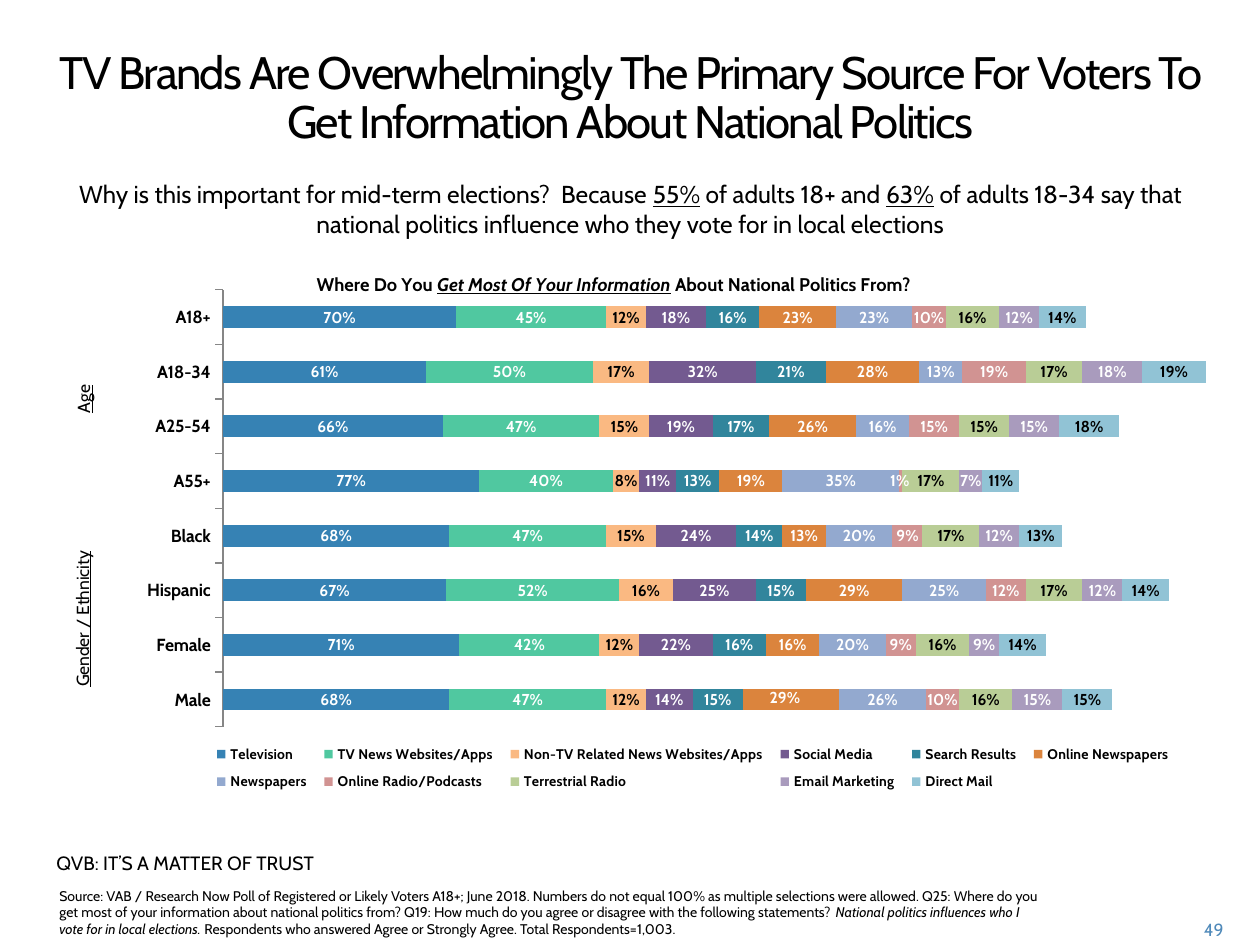
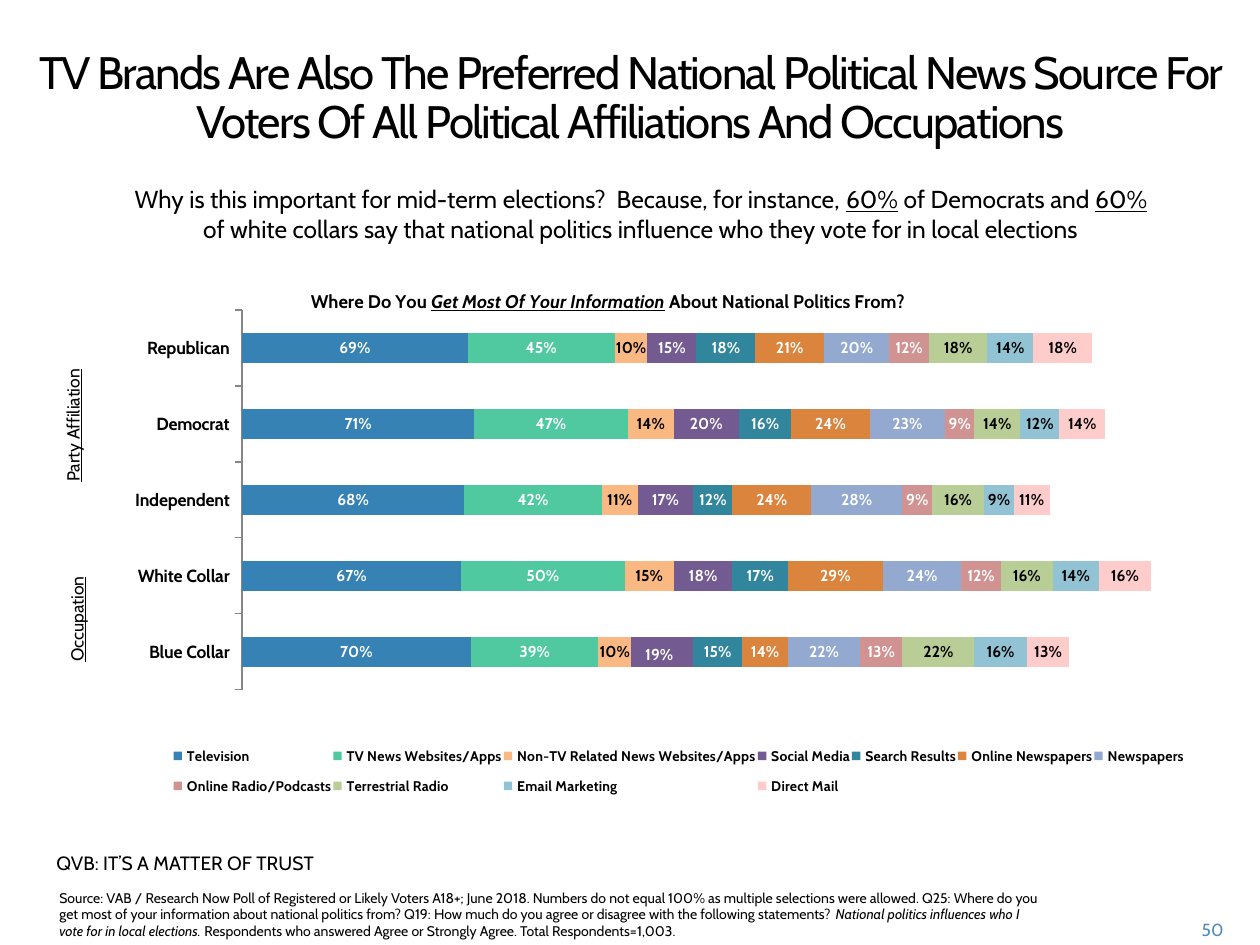
from dataclasses import dataclass

from lxml import etree
from pptx import Presentation
from pptx import util as u
from pptx.chart.data import CategoryChartData
from pptx.dml.color import RGBColor
from pptx.enum import chart as charts, text
from pptx.oxml.ns import qn

PX = 914400 // 126


@dataclass(frozen=True)
class Theme:
    font: str = "Cabin"
    ink: str = "000000"
    white: str = "FFFFFF"
    axis: str = "868686"
    page_number: str = "508ABA"
    title: int = 26
    title_line: int = 28
    lead: int = 14
    tagline: float = 11
    chart_title: float = 10.5
    body: float = 10
    label: float = 9
    small: float = 8


THEME = Theme()

# Content: a run is (words, style letters), u underlined, i italic, b bold
TAGLINE = [("QVB: IT’S A MATTER OF TRUST", "")]
SOURCE = [
    ("Source: VAB / Research Now Poll of Registered or Likely Voters A18+; June 2018. "
     "Numbers do not equal 100% as multiple selections were allowed. Q25: Where do you get "
     "most of your information about national politics from? Q19: How much do you agree or "
     "disagree with the following statements? ", ""),
    ("National politics influences who I vote for in local elections. ", "i"),
    ("Respondents who answered Agree or Strongly Agree. Total Respondents=1,003.", ""),
]
QUESTION = [
    ("Where Do You ", "b"),
    ("Get Most Of Your Information", "biu"),
    (" About National Politics From?", "b"),
]

# Media series: name, fill, label colour
SHARED_MEDIA = [
    ("Television", "3682B4", THEME.white),
    ("TV News Websites/Apps", "50C8A0", THEME.white),
    ("Non-TV Related News Websites/Apps", "FAB982", THEME.ink),
    ("Social Media", "735A90", THEME.white),
    ("Search Results", "31859C", THEME.white),
    ("Online Newspapers", "DB843D", THEME.white),
    ("Newspapers", "93A9CF", THEME.white),
    ("Online Radio/Podcasts", "D19392", THEME.white),
    ("Terrestrial Radio", "B9CD96", THEME.ink),
]

# Boxes are (left, top, width, height) in px; answers are percentages per media series
SLIDES = [
    dict(
        number="49",
        title="TV Brands Are Overwhelmingly The Primary Source For Voters To "
              "Get Information About National Politics",
        title_box=(24, 43, 1213, 116),
        lead=[
            ("Why is this important for mid-term elections?  Because ", ""), ("55%", "u"),
            (" of adults 18+ and ", ""), ("63%", "u"),
            (" of adults 18-34 say that national politics influence who they vote for "
             "in local elections", ""),
        ],
        lead_box=(24, 173, 1213, 89),
        source_top=881,
        groups=[("Age", (-13, 382, 193, 34)), ("Gender / Ethnicity", (-14, 602, 193, 34))],
        media=SHARED_MEDIA + [("Email Marketing", "A99BBD", THEME.white),
                              ("Direct Mail", "91C3D5", THEME.ink)],
        answers={
            "A18+": (70, 45, 12, 18, 16, 23, 23, 10, 16, 12, 14),
            "A18-34": (61, 50, 17, 32, 21, 28, 13, 19, 17, 18, 19),
            "A25-54": (66, 47, 15, 19, 17, 26, 16, 15, 15, 15, 18),
            "A55+": (77, 40, 8, 11, 13, 19, 35, 1, 17, 7, 11),
            "Black": (68, 47, 15, 24, 14, 13, 20, 9, 17, 12, 13),
            "Hispanic": (67, 52, 16, 25, 15, 29, 25, 12, 17, 12, 14),
            "Female": (71, 42, 12, 22, 16, 16, 20, 9, 16, 9, 14),
            "Male": (68, 47, 12, 14, 15, 29, 26, 10, 16, 15, 15),
        },
        nudges=[("Online Newspapers", "Male", (-6, -2)),
                ("Online Radio/Podcasts", "A55+", (-1, 0))],
        axis_max=3.5,
        chart_box=(115, 249, 1310, 559),
        plot_box=(223, 290, 1166, 437),
        question_at=(313, 267),
        legend_box=(204, 736, 978, 64),
    ),
    dict(
        number="50",
        title="TV Brands Are Also The Preferred National Political News Source For "
              "Voters Of All Political Affiliations And Occupations",
        title_box=(24, 43, 1213, 132),
        lead=[
            ("Why is this important for mid-term elections?  Because, for instance, ", ""),
            ("60%", "u"), (" of Democrats and ", ""), ("60%", "u"),
            (" of white collars say that national politics influence who they vote for "
             "in local elections", ""),
        ],
        lead_box=(111, 178, 1060, 89),
        source_top=883,
        groups=[("Party Affiliation", (-10, 406, 171, 39)), ("Occupation", (19, 602, 116, 34))],
        media=SHARED_MEDIA + [("Email Marketing", "91C3D5", THEME.ink),
                              ("Direct Mail", "FFCCCC", THEME.ink)],
        answers={
            "Republican": (69, 45, 10, 15, 18, 21, 20, 12, 18, 14, 18),
            "Democrat": (71, 47, 14, 20, 16, 24, 23, 9, 14, 12, 14),
            "Independent": (68, 42, 11, 17, 12, 24, 28, 9, 16, 9, 11),
            "White Collar": (67, 50, 15, 18, 17, 29, 24, 12, 16, 14, 16),
            "Blue Collar": (70, 39, 10, 19, 15, 14, 22, 13, 22, 16, 13),
        },
        nudges=[("Social Media", "Blue Collar", (-3, 3))],
        axis_max=3,
        chart_box=(112, 256, 1111, 596),
        plot_box=(242, 310, 981, 380),
        question_at=(307, 284),
        legend_box=(172, 735, 1014, 72),
    ),
]


def emu(box):
    return [value * PX for value in box]


def style_font(font, size, color=THEME.ink, bold=None):
    font.name, font.size, font.bold = THEME.font, u.Pt(size), bold
    font.color.rgb = RGBColor.from_string(color)


def write_runs(para, runs):
    for words, style in runs:
        span = para.add_run()
        span.text = words
        for letter, name in (("b", "bold"), ("i", "italic"), ("u", "underline")):
            if letter in style:
                setattr(span.font, name, True)


def add_text(page, place, runs, size, align=text.PP_ALIGN.LEFT, color=THEME.ink):
    box = page.shapes.add_textbox(*emu(place))
    box.text_frame.word_wrap = True
    para = box.text_frame.paragraphs[0]
    para.alignment = align
    write_runs(para, runs)
    style_font(para.font, size, color)
    return box


def write_title(page, words, place):
    title = page.shapes.title
    title.left, title.top, title.width, title.height = emu(place)
    frame = title.text_frame
    frame.auto_size = text.MSO_AUTO_SIZE.NONE
    frame.vertical_anchor = text.MSO_ANCHOR.TOP
    para = frame.paragraphs[0]
    para.alignment = text.PP_ALIGN.CENTER
    para.line_spacing = u.Pt(THEME.title_line)
    write_runs(para, [(words, "")])
    style_font(para.font, THEME.title)
    para.runs[0].font._element.set("spc", "-100")


def set_layout(parent, index, settings):
    """Give a chart part a manual layout as child number index."""
    for old in parent.findall(qn("c:layout")):
        parent.remove(old)
    layout = etree.Element(qn("c:layout"))
    manual = etree.SubElement(layout, qn("c:manualLayout"))
    for name, value in settings.items():
        shown = value if isinstance(value, str) else f"{value:.4f}"
        etree.SubElement(manual, qn(f"c:{name}")).set("val", shown)
    parent.insert(index, layout)


def fractions(place, chart_box):
    """Turn page px into edge-based shares of the chart frame."""
    left, top, width, height = chart_box
    settings = dict(xMode="edge", yMode="edge",
                    x=(place[0] - left) / width, y=(place[1] - top) / height)
    if len(place) == 4:
        settings.update(w=place[2] / width, h=place[3] / height)
    return settings


def before_overlay(element):
    for old in element.findall(qn("c:layout")):
        element.remove(old)
    return element.index(element.find(qn("c:overlay")))


def add_media_chart(page, slide):
    # Rows run bottom to top on a bar chart
    groups = list(reversed(slide["answers"]))
    data = CategoryChartData(number_format="0%")
    data.categories = groups
    for index, (name, _, _) in enumerate(slide["media"]):
        data.add_series(name, [slide["answers"][group][index] / 100 for group in groups])
    frame = slide["chart_box"]
    chart = page.shapes.add_chart(charts.XL_CHART_TYPE.BAR_STACKED, *emu(frame), data).chart
    style_font(chart.font, THEME.body)

    # Question above the bars
    chart.has_title = True
    para = chart.chart_title.text_frame.paragraphs[0]
    write_runs(para, QUESTION)
    style_font(para.font, THEME.chart_title, bold=True)
    heading = chart.chart_title._element
    set_layout(heading, before_overlay(heading), fractions(slide["question_at"], frame))

    # Axes
    rows, values = chart.category_axis, chart.value_axis
    style_font(rows.tick_labels.font, THEME.body, bold=True)
    rows.format.line.color.rgb = RGBColor.from_string(THEME.axis)
    rows.major_tick_mark = charts.XL_TICK_MARK.OUTSIDE
    values.visible = values.has_major_gridlines = False
    values.minimum_scale, values.maximum_scale = 0, slide["axis_max"]

    # Legend and plot area
    chart.has_legend = True
    legend = chart.legend
    legend.position = charts.XL_LEGEND_POSITION.BOTTOM
    legend.include_in_layout = False
    style_font(legend.font, THEME.small, bold=True)
    key = legend._element
    set_layout(key, before_overlay(key), fractions(slide["legend_box"], frame))
    area = chart._chartSpace.chart.plotArea
    set_layout(area, 0, {"layoutTarget": "inner", **fractions(slide["plot_box"], frame)})

    # Bars and their labels
    plot = chart.plots[0]
    plot.gap_width, plot.overlap = 150, 100
    plot.vary_by_categories = False
    for series, (name, fill, label_color) in zip(plot.series, slide["media"]):
        series.format.fill.solid()
        series.format.fill.fore_color.rgb = RGBColor.from_string(fill)
        labels = series.data_labels
        labels.show_value = True
        labels.number_format, labels.number_format_is_linked = "0%", False
        style_font(labels.font, THEME.label, label_color, bold=True)
        for media, group, (right, down) in slide["nudges"]:
            if media == name:
                label = series.points[groups.index(group)].data_label
                style_font(label.font, THEME.label, label_color, bold=True)
                set_layout(label._dLbl, 1, dict(x=right / frame[2], y=down / frame[3]))


def build_slide(deck, slide):
    page = deck.slides.add_slide(deck.slide_layouts[5])
    add_media_chart(page, slide)
    write_title(page, slide["title"], slide["title_box"])
    add_text(page, slide["lead_box"], slide["lead"], THEME.lead, text.PP_ALIGN.CENTER)

    # Row groups, read upwards
    for name, place in slide["groups"]:
        box = add_text(page, place, [(name, "u")], THEME.body, text.PP_ALIGN.CENTER)
        box.rotation = 270

    # Footer
    add_text(page, (44, 845, 311, 40), TAGLINE, THEME.tagline)
    add_text(page, (47, slide["source_top"], 1012, 39), SOURCE, THEME.small)
    add_text(page, (1159, 913, 77, 32), [(slide["number"], "")], THEME.body,
             text.PP_ALIGN.RIGHT, THEME.page_number)


def main():
    deck = Presentation()
    deck.slide_width, deck.slide_height = emu((1260, 945))
    for slide in SLIDES:
        build_slide(deck, slide)
    deck.save("out.pptx")


if __name__ == "__main__":
    main()
